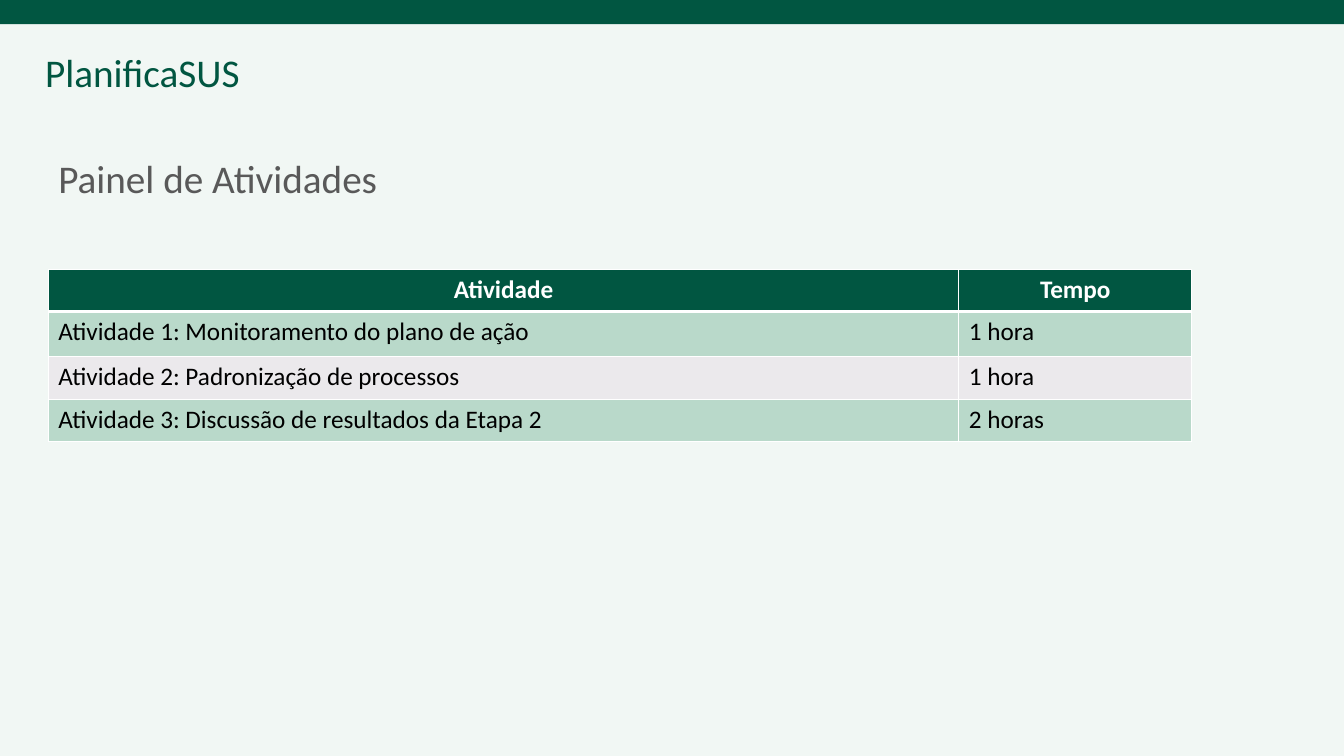
from dataclasses import dataclass

from lxml.etree import SubElement
from pptx import Presentation
from pptx.dml.color import RGBColor
from pptx.enum.shapes import MSO_SHAPE
from pptx.enum.text import MSO_ANCHOR, PP_ALIGN
from pptx.oxml.ns import qn
from pptx.slide import Slide
from pptx.table import _Cell
from pptx.text.text import _Paragraph
from pptx.util import Inches, Pt


@dataclass(frozen=True)
class Theme:
    font: str = "Calibri"
    green: str = "015641"
    mint: str = "B9D9CA"
    light_grey: str = "EBE9EC"
    background: str = "F1F7F4"
    title_grey: str = "595959"
    white: str = "FFFFFF"
    black: str = "000000"
    heading_size: int = 28
    table_size: int = 18
    border: int = 1
    header_border: int = 3


@dataclass(frozen=True)
class Heading:
    text: str
    left: float
    top: float
    width: float
    height: float
    color: str
    wrap: bool
    anchor: MSO_ANCHOR
    line_spacing: float


@dataclass(frozen=True)
class Activity:
    name: str
    time: str
    height: float


THEME = Theme()

HEADINGS = [
    Heading("PlanificaSUS", 0.35, 0.43, 2.15, 0.57, THEME.green, False, MSO_ANCHOR.TOP, 1.0),
    Heading("Painel de Atividades", 0.48, 1.07, 10.99, 1.45, THEME.title_grey, True,
            MSO_ANCHOR.MIDDLE, 0.9),
]

COLUMN_WIDTHS = [9.03, 2.31]
ACTIVITIES = [
    Activity("Atividade", "Tempo", 0.42),
    Activity("Atividade 1: Monitoramento do plano de ação", "1 hora", 0.45),
    Activity("Atividade 2: Padronização de processos", "1 hora", 0.42),
    Activity("Atividade 3: Discussão de resultados da Etapa 2", "2 horas", 0.42),
]


def add_run(paragraph: _Paragraph, text: str, size: int, color: str, bold: bool = False) -> None:
    run = paragraph.add_run()
    run.text = text
    run.font.name = THEME.font
    run.font.size = Pt(size)
    run.font.bold = bold
    run.font.color.rgb = RGBColor.from_string(color)


def add_heading(slide: Slide, heading: Heading) -> None:
    box = slide.shapes.add_textbox(Inches(heading.left), Inches(heading.top),
                                   Inches(heading.width), Inches(heading.height))
    frame = box.text_frame
    frame.word_wrap = heading.wrap
    frame.vertical_anchor = heading.anchor
    paragraph = frame.paragraphs[0]
    paragraph.line_spacing = heading.line_spacing
    add_run(paragraph, heading.text, THEME.heading_size, heading.color)


def set_borders(cell: _Cell, top: int, bottom: int) -> None:
    widths = {"a:lnL": THEME.border, "a:lnR": THEME.border, "a:lnT": top, "a:lnB": bottom}
    properties = cell._tc.get_or_add_tcPr()
    for side, width in widths.items():
        line = SubElement(properties, qn(side), w=str(Pt(width)))
        fill = SubElement(line, qn("a:solidFill"))
        SubElement(fill, qn("a:srgbClr"), val=THEME.white)


def fill_cell(cell: _Cell, text: str, row: int) -> None:
    is_header = row == 0
    set_borders(cell,
                top=THEME.header_border if row == 1 else THEME.border,
                bottom=THEME.header_border if is_header else THEME.border)
    band = THEME.mint if row % 2 else THEME.light_grey
    cell.fill.solid()
    cell.fill.fore_color.rgb = RGBColor.from_string(THEME.green if is_header else band)
    paragraph = cell.text_frame.paragraphs[0]
    paragraph.alignment = PP_ALIGN.CENTER if is_header else PP_ALIGN.LEFT
    add_run(paragraph, text, THEME.table_size,
            THEME.white if is_header else THEME.black, bold=is_header)


def add_activity_table(slide: Slide, left: float, top: float) -> None:
    table = slide.shapes.add_table(
        len(ACTIVITIES), len(COLUMN_WIDTHS), Inches(left), Inches(top),
        Inches(sum(COLUMN_WIDTHS)), Inches(sum(a.height for a in ACTIVITIES))).table
    for column, width in zip(table.columns, COLUMN_WIDTHS):
        column.width = Inches(width)
    for row, activity in enumerate(ACTIVITIES):
        table.rows[row].height = Inches(activity.height)
        for column, text in enumerate((activity.name, activity.time)):
            fill_cell(table.cell(row, column), text, row)


def main() -> None:
    presentation = Presentation()
    presentation.slide_width = Inches(13.33)
    presentation.slide_height = Inches(7.5)
    slide = presentation.slides.add_slide(presentation.slide_layouts[6])

    # Background
    slide.background.fill.solid()
    slide.background.fill.fore_color.rgb = RGBColor.from_string(THEME.background)

    # Top band
    band = slide.shapes.add_shape(MSO_SHAPE.RECTANGLE, 0, 0,
                                  presentation.slide_width, Inches(0.24))
    band.shadow.inherit = False
    band.fill.solid()
    band.fill.fore_color.rgb = RGBColor.from_string(THEME.green)
    band.line.fill.background()

    # Programme name and slide title
    for heading in HEADINGS:
        add_heading(slide, heading)

    # Activities and their duration
    add_activity_table(slide, left=0.48, top=2.67)

    presentation.save("out.pptx")


if __name__ == "__main__":
    main()
